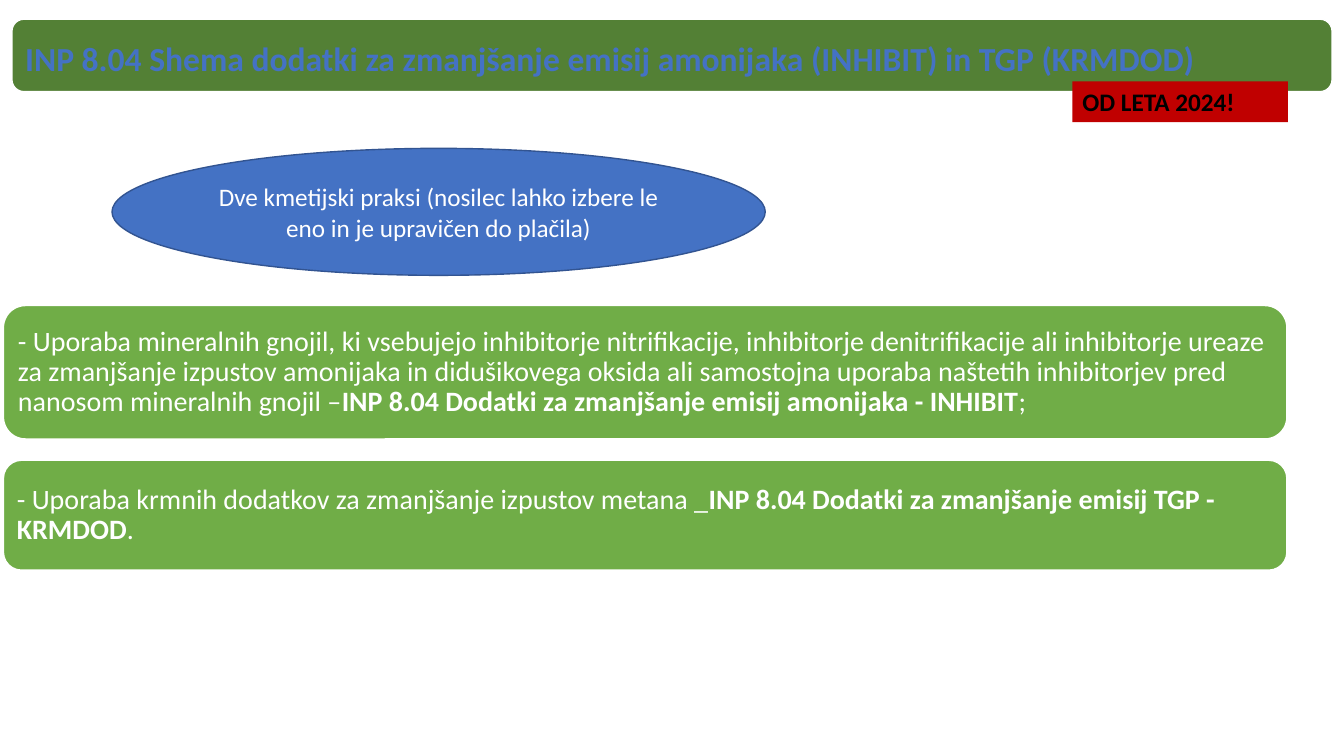
import pptx
import pptx.dml.color
import pptx.enum.shapes
import pptx.enum.text
import pptx.util

Pt = pptx.util.Pt
Kind = pptx.enum.shapes.MSO_SHAPE
Align = pptx.enum.text.PP_ALIGN
Anchor = pptx.enum.text.MSO_ANCHOR
WHITE = "FFFFFF"
BLUE = "4472C4"
GREEN = "70AD47"


def color(code):
    """Turn a hex string into a colour."""
    return pptx.dml.color.RGBColor.from_string(code)


def shape(slide, kind, box, fill, edge=None, width=1):
    """Add a filled preset shape with an optional outline."""
    item = slide.shapes.add_shape(kind, *map(Pt, box))
    item.shadow.inherit = False
    item.fill.solid()
    item.fill.fore_color.rgb = color(fill)
    if edge:
        item.line.color.rgb = color(edge)
        item.line.width = Pt(width)
    else:
        item.line.fill.background()
    return item


def write(item, parts, size, ink, bold=None, align=Align.LEFT,
          anchor=Anchor.MIDDLE, pad=(7.2, 3.6), lead=1):
    """Write one paragraph made of (text, bold) parts."""
    frame = item.text_frame
    frame.word_wrap = True
    frame.auto_size = pptx.enum.text.MSO_AUTO_SIZE.NONE
    frame.vertical_anchor = anchor
    frame.margin_left = frame.margin_right = Pt(pad[0])
    frame.margin_top = frame.margin_bottom = Pt(pad[1])
    para = frame.paragraphs[0]
    para.alignment = align
    para.line_spacing = lead
    para.font.name = "Calibri"
    para.font.size = Pt(size)
    para.font.color.rgb = color(ink)
    para.font.bold = bold
    for text, strong in parts:
        run = para.add_run()
        run.text = text
        if strong:
            run.font.bold = True


def header(slide, box, text):
    """Place the title on its dark green bar."""
    left, top, width, height = box
    shape(slide, Kind.ROUNDED_RECTANGLE, box, "538035", WHITE)
    title = slide.shapes.title
    title.left, title.top = Pt(left), Pt(top + 7)
    title.width, title.height = Pt(width - 3), Pt(height - 7)
    title.element.getparent().append(title.element)
    write(title, [(text, False)], 24, BLUE, True, pad=(9.5, 9.5), lead=0.9)


def tag(slide, box, text):
    """Place the red date tag."""
    item = shape(slide, Kind.RECTANGLE, box, "C00000")
    write(item, [(text, False)], 18, "000000", True, anchor=Anchor.TOP)


def bubble(slide, box, text):
    """Place the blue ellipse."""
    item = shape(slide, Kind.OVAL, box, BLUE, "325491")
    write(item, [(text, False)], 18, WHITE, align=Align.CENTER)


def card(slide, box, lead, name, end):
    """Place a green card for one practice, with its name in bold."""
    item = shape(slide, Kind.ROUNDED_RECTANGLE, box, GREEN, WHITE, 1.5)
    parts = [(lead, False), (name, True), (end, False)]
    write(item, parts, 20, WHITE, pad=(6, 6), lead=0.9)


def main():
    """Build the slide and save it."""
    deck = pptx.Presentation()
    deck.slide_width, deck.slide_height = Pt(960), Pt(540)
    slide = deck.slides.add_slide(deck.slide_layouts[5])
    card(slide, (2.2, 218, 917.3, 95.8),
         "- Uporaba mineralnih gnojil, ki vsebujejo inhibitorje nitrifikacije, "
         "inhibitorje denitrifikacije ali inhibitorje ureaze za zmanjšanje "
         "izpustov amonijaka in didušikovega oksida ali samostojna uporaba "
         "naštetih inhibitorjev pred nanosom mineralnih gnojil –",
         "INP 8.04 Dodatki za zmanjšanje emisij amonijaka - INHIBIT", ";")
    card(slide, (2.2, 328.5, 917.3, 79),
         "- Uporaba krmnih dodatkov za zmanjšanje izpustov metana _",
         "INP 8.04 Dodatki za zmanjšanje emisij TGP - KRMDOD", ".")
    header(slide, (8.5, 13.7, 943, 51.8),
           "INP 8.04 Shema dodatki za zmanjšanje emisij amonijaka "
           "(INHIBIT) in TGP (KRMDOD)")
    tag(slide, (766, 58.2, 154, 29), "OD LETA 2024!")
    bubble(slide, (80, 106, 466.6, 90.7),
           "Dve kmetijski praksi (nosilec lahko izbere le eno in je "
           "upravičen do plačila)")
    deck.save("out.pptx")


if __name__ == "__main__":
    main()
